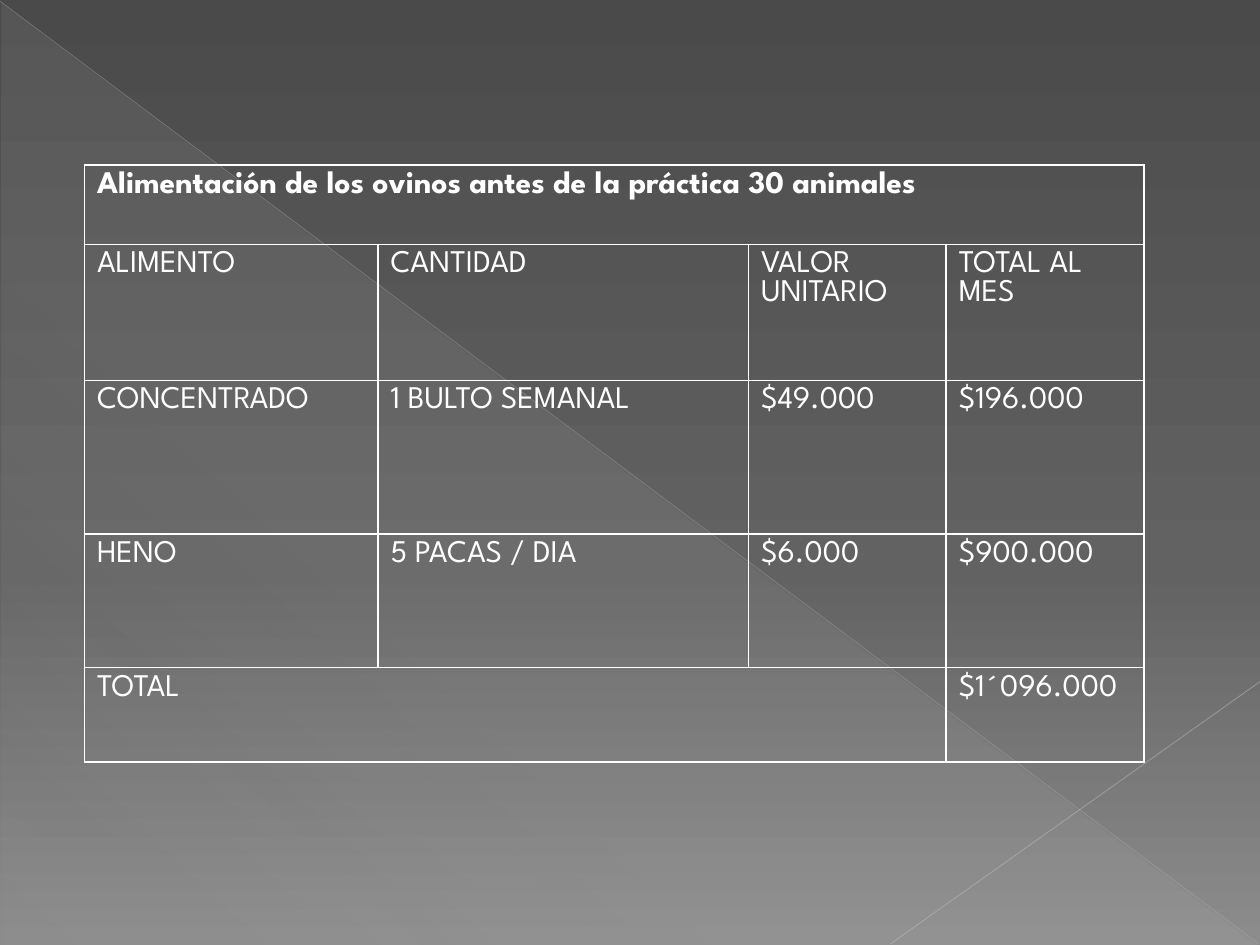
from lxml.etree import SubElement as Sub
from pptx import Presentation
from pptx.dml.color import RGBColor as RGB
from pptx.enum.shapes import MSO_CONNECTOR as Conn, MSO_SHAPE as Shape
from pptx.oxml.ns import qn
from pptx.util import Inches, Pt

HEX = {"dark": "4A4A4A", "mid": "626262", "light": "8C8C8C", "veil": "D2D2D2",
       "long": "BFBFBF", "short": "C6C6C6", "white": "FFFFFF"}
FONT = {"name": "League Spartan", "size": Pt(18), "bold": False}
COLS = [2.33, 2.94, 1.57, 1.57]
ROWS = [0.63, 1.08, 1.22, 1.06, 0.75]
DATA = [
    ["Alimentación de los ovinos antes de la práctica 30 animales"],
    ["ALIMENTO", "CANTIDAD", "VALOR UNITARIO", "TOTAL AL MES"],
    ["CONCENTRADO", "1 BULTO SEMANAL", "$49.000", "$196.000"],
    ["HENO", "5 PACAS / DIA", "$6.000", "$900.000"],
    ["TOTAL", "", "", "$1´096.000"],
]


def tint(node, key, alpha=100):
    """Add a colour, see-through if alpha is below 100, to an XML node."""
    clr = Sub(node, qn("a:srgbClr"), val=HEX[key])
    if alpha < 100:
        Sub(clr, qn("a:alpha"), val=str(alpha * 1000))


def shade(fill, root, stops, angle):
    """Give a fill a linear gradient of (place, colour, alpha) stops."""
    fill.gradient()
    grad = root.find(".//" + qn("a:gradFill"))
    grad.find(qn("a:lin")).set("ang", str(angle * 60000))
    group = grad.find(qn("a:gsLst"))
    group.clear()
    for place, key, alpha in stops:
        tint(Sub(group, qn("a:gs"), pos=str(place * 1000)), key, alpha)


def add_veil(slide):
    """Draw the pale triangle over the lower left half."""
    box = map(Inches, (0.01, 0.02, 9.98, 7.48))
    veil = slide.shapes.add_shape(Shape.RIGHT_TRIANGLE, *box)
    veil.shadow.inherit = False
    veil.line.fill.background()
    stops = [(0, "veil", 10), (70, "veil", 8), (100, "veil", 1)]
    shade(veil.fill, veil.element, stops, 133)


def add_line(slide, ends, key, width, alpha):
    """Draw a thin see-through line."""
    line = slide.shapes.add_connector(Conn.STRAIGHT, *map(Inches, ends))
    line.line.width = Pt(width)
    line.line.color.rgb = RGB.from_string(HEX[key])
    clr = line.element.spPr.find(".//" + qn("a:srgbClr"))
    Sub(clr, qn("a:alpha"), val=str(alpha * 1000))
    Sub(line.element.spPr, qn("a:effectLst"))


def style_cell(cell, text, form):
    """Fill in one cell, with white borders and no fill."""
    prop = cell._tc.get_or_add_tcPr()
    for side in ("lnL", "lnR", "lnT", "lnB"):
        edge = Sub(prop, qn("a:" + side), w=str(Pt(1)))
        tint(Sub(edge, qn("a:solidFill")), "white")
    cell.fill.background()
    if text:
        run = cell.text_frame.paragraphs[0].add_run()
        run.text = text
        run.font.color.rgb = RGB.from_string(HEX["white"])
        for name, value in form.items():
            setattr(run.font, name, value)


def add_grid(slide):
    """Add the table of feed costs."""
    box = map(Inches, (0.67, 1.31, sum(COLS), sum(ROWS)))
    grid = slide.shapes.add_table(len(ROWS), len(COLS), *box).table
    grid.first_row = grid.horz_banding = False
    for col, width in zip(grid.columns, COLS):
        col.width = Inches(width)
    for r, (high, words) in enumerate(zip(ROWS, DATA)):
        grid.rows[r].height = Inches(high)
        words = words + [""] * (len(COLS) - len(words))
        for c, text in enumerate(words):
            style_cell(grid.cell(r, c), text, {**FONT, "bold": r == 0})
    grid.cell(0, 0).merge(grid.cell(0, 3))
    grid.cell(4, 0).merge(grid.cell(4, 2))


def main():
    """Build and save the slide."""
    deck = Presentation()
    deck.slide_width, deck.slide_height = Inches(10), Inches(7.5)
    slide = deck.slides.add_slide(deck.slide_layouts[6])
    stops = [(0, "dark", 100), (60, "mid", 100), (100, "light", 100)]
    shade(slide.background.fill, slide.element, stops, 90)
    add_veil(slide)
    add_line(slide, (0, 0.01, 9.99, 7.49), "long", 0.39, 35)
    add_line(slide, (10, 5.41, 7.07, 7.49), "short", 0.47, 45)
    add_grid(slide)
    deck.save("out.pptx")


if __name__ == "__main__":
    main()
